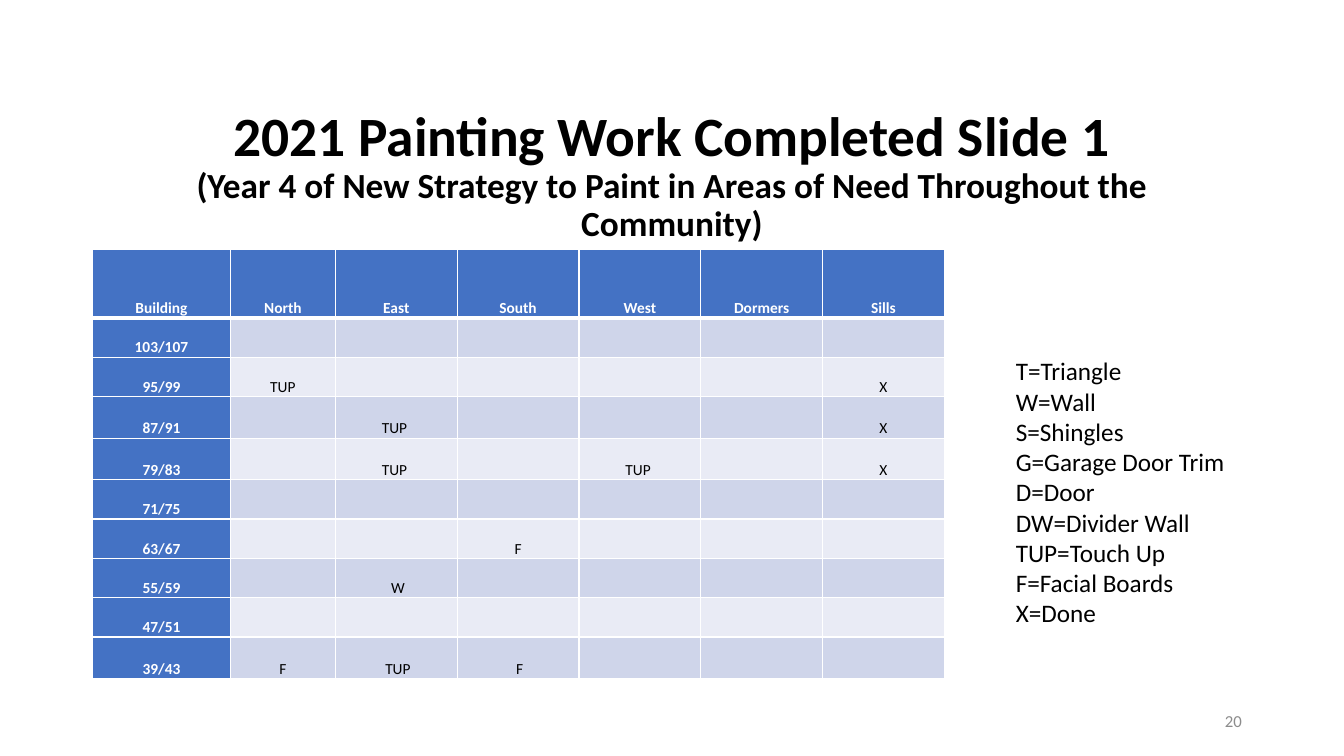
from lxml.etree import SubElement
from pptx import Presentation
from pptx.dml.color import RGBColor
from pptx.enum.text import MSO_ANCHOR, PP_ALIGN
from pptx.oxml.ns import qn
from pptx.util import Cm, Pt

HEADERS = ["Building", "North", "East", "South", "West", "Dormers", "Sills"]
WORK = {
    "103/107": {},
    "95/99": {"North": "TUP", "Sills": "X"},
    "87/91": {"East": "TUP ", "Sills": "X"},
    "79/83": {"East": "TUP ", "West": "TUP ", "Sills": "X"},
    "71/75": {},
    "63/67": {"South": "F"},
    "55/59": {"East": " W"},
    "47/51": {},
    "39/43": {"North": "F", "East": " TUP", "South": " F"},
}
COLUMN_WIDTHS = [3.48, 2.64] + [3.07] * 5
ROW_HEIGHTS = [1.73, 0.99, 0.99, 1.05, 1.05, 0.99, 0.99, 0.99, 0.99, 1.05]
LEGEND = ["T=Triangle", "W=Wall", "S=Shingles", "G=Garage Door Trim", "D=Door",
          "DW=Divider Wall", "TUP=Touch Up", "F=Facial Boards", "X=Done"]


def color(value):
    return RGBColor.from_string(value)


def set_all(target, values):
    for name, value in values.items():
        setattr(target, name, value)


class SlideBuilder:
    font = "Calibri"
    black, white, gray = "000000", "FFFFFF", "8C8C8C"
    accent, bands = "4472C4", ("E9EBF5", "CFD5EA")

    def __init__(self, prs):
        self.s = prs.slides.add_slide(prs.slide_layouts[6])

    def run(self, p, text, size, hex_color, bold=False):
        r = p.add_run()
        r.text = text
        set_all(r.font, {"name": self.font, "size": Pt(size), "bold": bold})
        r.font.color.rgb = color(hex_color)

    def text_box(self, box, paragraphs, align=PP_ALIGN.LEFT,
                 anchor=MSO_ANCHOR.TOP, spacing=None):
        """Each paragraph is a list of lines; each line is the arguments of run()."""
        sp = self.s.shapes.add_textbox(*map(Cm, box))
        tf = sp.text_frame
        set_all(tf, {"word_wrap": True, "vertical_anchor": anchor})
        for i, lines in enumerate(paragraphs):
            p = tf.add_paragraph() if i else tf.paragraphs[0]
            set_all(p, {"alignment": align, "line_spacing": spacing})
            for j, line in enumerate(lines):
                if j:
                    p.add_line_break()
                self.run(p, *line)

    def borders(self, cell, widths):
        tc_pr = cell._tc.get_or_add_tcPr()
        for side, width in widths.items():
            ln = SubElement(tc_pr, qn(f"a:ln{side}"), w=str(Pt(width)))
            fill = SubElement(ln, qn("a:solidFill"))
            SubElement(fill, qn("a:srgbClr"), val=self.white)

    def cell(self, cell, text, row, col):
        is_header = row == 0 or col == 0
        set_all(cell, {"margin_left": 0, "margin_right": 0, "margin_top": 0,
                       "margin_bottom": 0, "vertical_anchor": MSO_ANCHOR.BOTTOM})
        self.borders(cell, {"L": 1, "R": 1, "T": 3 if row == 1 else 1,
                            "B": 3 if row == 0 else 1})
        cell.fill.solid()
        cell.fill.fore_color.rgb = color(self.accent if is_header else self.bands[row % 2])
        p = cell.text_frame.paragraphs[0]
        p.alignment = PP_ALIGN.CENTER
        if text:
            self.run(p, text, 11, self.white if is_header else self.black, is_header)

    def table(self, left, top, rows, widths, heights):
        frame = self.s.shapes.add_table(len(rows), len(widths), Cm(left), Cm(top),
                                        Cm(sum(widths)), Cm(sum(heights)))
        table = frame.table
        for column, width in zip(table.columns, widths):
            column.width = Cm(width)
        for row, height in zip(table.rows, heights):
            row.height = Cm(height)
        for i, texts in enumerate(rows):
            for j, text in enumerate(texts):
                self.cell(table.cell(i, j), text, i, j)


def main():
    prs = Presentation()
    set_all(prs, {"slide_width": Cm(33.87), "slide_height": Cm(19.05)})
    slide = SlideBuilder(prs)

    title = [
        ("2021 Painting Work Completed Slide 1", 39.6, slide.black, True),
        ("(Year 4 of New Strategy to Paint in Areas of Need Throughout the Community)",
         25.2, slide.black, True),
    ]
    slide.text_box((2.33, 2.6, 29.21, 3.68), [title], PP_ALIGN.CENTER,
                   MSO_ANCHOR.MIDDLE, 0.9)

    rows = [HEADERS] + [[building] + [done.get(side, "") for side in HEADERS[1:]]
                        for building, done in WORK.items()]
    slide.table(2.33, 6.28, rows, COLUMN_WIDTHS, ROW_HEIGHTS)

    slide.text_box((25.35, 8.84, 7.16, 7.95),
                   [[(entry, 18, slide.black)] for entry in LEGEND])
    slide.text_box((23.93, 17.65, 7.62, 1.02), [[("20", 12, slide.gray)]],
                   PP_ALIGN.RIGHT, MSO_ANCHOR.MIDDLE)
    prs.save("out.pptx")


if __name__ == "__main__":
    main()
